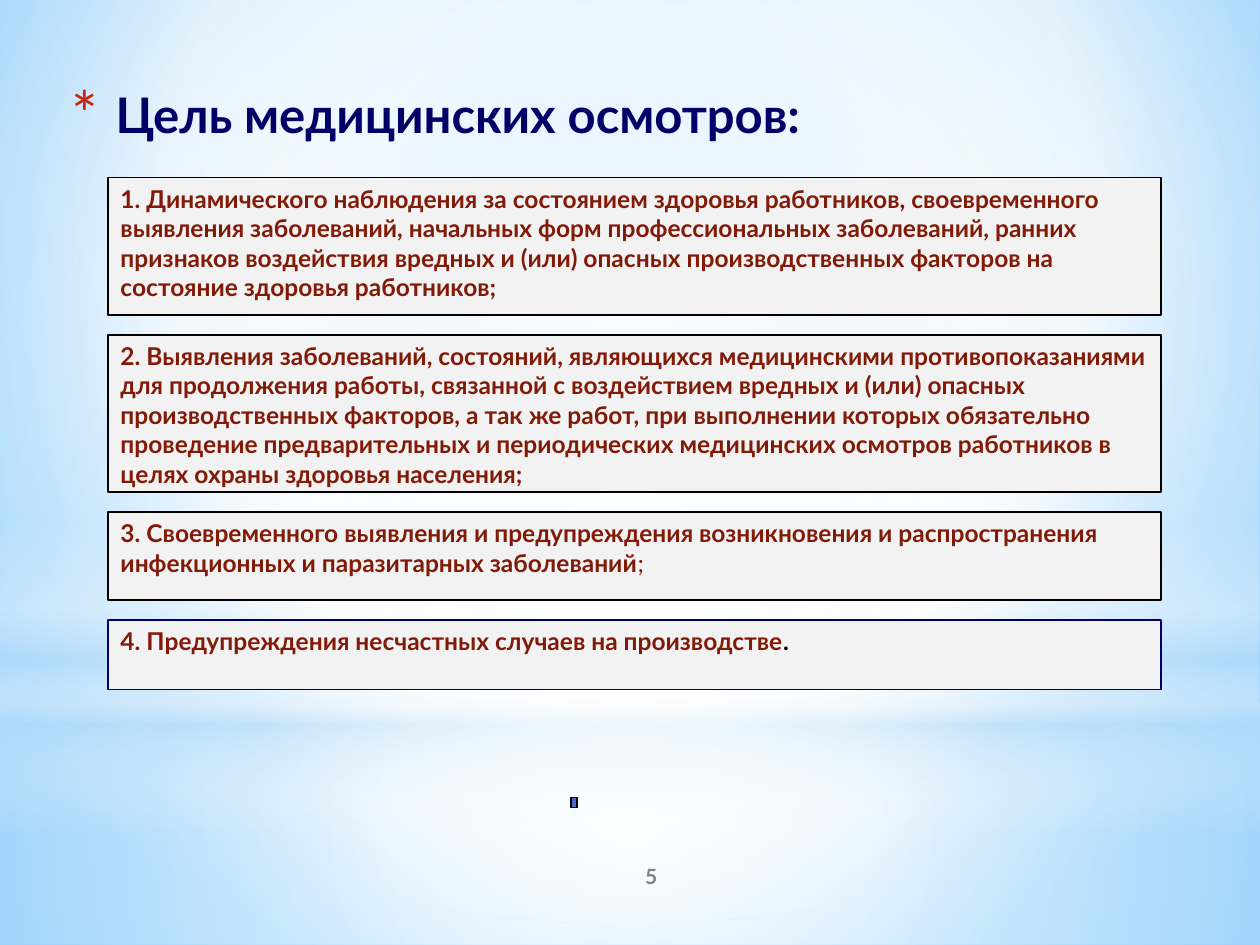
"""Build the slide on the goals of medical examinations."""
from dataclasses import dataclass

from lxml.etree import SubElement
from pptx import Presentation
from pptx.dml.color import RGBColor
from pptx.enum.shapes import MSO_SHAPE
from pptx.enum.text import MSO_ANCHOR, PP_ALIGN
from pptx.oxml.ns import qn
from pptx.util import Cm, Pt


@dataclass(frozen=True)
class Theme:
    font: str = "Lato"
    title_size: int = 28
    body_size: int = 14
    number_size: int = 12
    title: str = "000066"
    body: str = "821A08"
    black: str = "000000"
    number: str = "808080"
    bullet: str = "C3260C"
    box: str = "F2F2F2"
    marker: str = "4E67C8"
    white: str = "FFFFFF"
    haze: str = "B4DCFA"
    sky: str = "9ED5FF"
    deep_sky: str = "5BB9FF"


THEME = Theme()
CENTER = (50, 50, 50, 50)
GOALS = [
    (2.77, THEME.black, [("1. Динамического наблюдения за состоянием здоровья работников, своевременного выявления заболеваний, начальных форм профессиональных заболеваний, ранних признаков воздействия вредных и (или) опасных производственных факторов на состояние здоровья работников;", THEME.body, True)]),
    (3.17, THEME.black, [("2. Выявления заболеваний, состояний, являющихся медицинскими противопоказаниями для продолжения работы, связанной с воздействием вредных и (или) опасных производственных факторов, а так же работ, при выполнении которых обязательно проведение предварительных и периодических медицинских осмотров работников в целях охраны здоровья населения;", THEME.body, True)]),
    (1.78, THEME.black, [("3. Своевременного выявления и предупреждения возникновения и распространения инфекционных и паразитарных заболеваний", THEME.body, True), (";", THEME.body, False)]),
    (1.4, THEME.title, [("4. Предупреждения несчастных случаев на производстве", THEME.body, True), (".", THEME.black, True)]),
]


def set_gradient(fill, owner, stops, focus=None):
    """Give a fill radial stops around a focus, or vertical stops without one."""
    fill.solid()
    solid = owner.find(".//" + qn("a:solidFill"))
    gradient = solid.makeelement(qn("a:gradFill"), {"rotWithShape": "1"})
    solid.getparent().replace(solid, gradient)
    stop_list = SubElement(gradient, qn("a:gsLst"))
    for position, color, opacity in stops:
        stop = SubElement(stop_list, qn("a:gs"), pos=str(position * 1000))
        value = SubElement(stop, qn("a:srgbClr"), val=color)
        if opacity < 100:
            SubElement(value, qn("a:alpha"), val=str(opacity * 1000))
    if focus is None:
        SubElement(gradient, qn("a:lin"), ang="5400000", scaled="0")
        return
    radial = SubElement(gradient, qn("a:path"), path="circle")
    edges = {side: str(share * 1000) for side, share in zip("ltrb", focus)}
    SubElement(radial, qn("a:fillToRect"), edges)


def add_glow(slide, kind, top, height, stops, focus=None):
    """Add a full-width translucent gradient shape."""
    shape = slide.shapes.add_shape(kind, 0, Cm(top), Cm(25.4), Cm(height))
    shape.shadow.inherit = False
    set_gradient(shape.fill, shape._element, stops, focus)
    shape.line.fill.background()


def add_backdrop(slide):
    """Paint the sky background and its layers of light."""
    white, haze = THEME.white, THEME.haze
    set_gradient(slide.background.fill, slide._element,
                 [(0, THEME.sky, 100), (60, white, 100), (100, THEME.deep_sky, 100)],
                 (20, 10, 20, 60))
    rectangle = MSO_SHAPE.RECTANGLE
    add_glow(slide, rectangle, 14.17, 4.88,
             [(0, white, 91), (37, white, 76), (100, haze, 79)], CENTER)
    add_glow(slide, rectangle, 0, 14.17,
             [(0, white, 89), (48, white, 62), (100, haze, 79)], CENTER)
    add_glow(slide, rectangle, 10.46, 6.35,
             [(0, white, 0), (29, white, 30), (45, haze, 40),
              (55, white, 26), (65, haze, 60), (100, white, 0)])
    add_glow(slide, MSO_SHAPE.OVAL, 4.45, 14.17,
             [(0, white, 100), (56, white, 0)], CENTER)


def write_runs(shape, runs, size, alignment=PP_ALIGN.LEFT, anchor=MSO_ANCHOR.TOP):
    """Write one paragraph of (text, color, bold) runs and return it."""
    frame = shape.text_frame
    frame.word_wrap = True
    frame.vertical_anchor = anchor
    paragraph = frame.paragraphs[0]
    paragraph.alignment = alignment
    for text, color, bold in runs:
        run = paragraph.add_run()
        run.text = text
        run.font.name = THEME.font
        run.font.size = Pt(size)
        run.font.bold = bold
        run.font.color.rgb = RGBColor.from_string(color)
    return paragraph


def add_title(slide, text):
    """Add the title with its hanging asterisk bullet."""
    shape = slide.shapes.add_textbox(Cm(1.19), Cm(1.57), Cm(22.86), Cm(2.01))
    paragraph = write_runs(shape, [(text, THEME.title, True)], THEME.title_size)
    properties = paragraph._p.get_or_add_pPr()
    properties.set("marL", str(Cm(0.89)))
    properties.set("indent", str(-Cm(0.89)))
    color = SubElement(properties, qn("a:buClr"))
    SubElement(color, qn("a:srgbClr"), val=THEME.bullet)
    SubElement(properties, qn("a:buSzPct"), val="128000")
    SubElement(properties, qn("a:buFont"), typeface=THEME.font)
    SubElement(properties, qn("a:buChar"), char="*")


def add_box(slide, left, top, width, height, fill, line):
    """Add a flat rectangle with a thin outline."""
    shape = slide.shapes.add_shape(MSO_SHAPE.RECTANGLE, Cm(left), Cm(top), Cm(width), Cm(height))
    shape.shadow.inherit = False
    shape.fill.solid()
    shape.fill.fore_color.rgb = RGBColor.from_string(fill)
    shape.line.color.rgb = RGBColor.from_string(line)
    shape.line.width = Pt(1)
    return shape


def add_goals(slide):
    """Stack the goal boxes with equal gaps."""
    top, gap = 3.58, 0.4
    for height, line, runs in GOALS:
        box = add_box(slide, 2.18, top, 21.23, height, THEME.box, line)
        write_runs(box, runs, THEME.body_size)
        top += height + gap


def add_page_number(slide, text):
    """Add the centred page number."""
    shape = slide.shapes.add_textbox(Cm(10.59), Cm(17.15), Cm(5.08), Cm(1.02))
    write_runs(shape, [(text, THEME.number, True)], THEME.number_size,
               PP_ALIGN.CENTER, MSO_ANCHOR.MIDDLE)


def main():
    """Build and save the presentation."""
    presentation = Presentation()
    presentation.slide_width, presentation.slide_height = Cm(25.4), Cm(19.05)
    slide = presentation.slides.add_slide(presentation.slide_layouts[6])
    add_backdrop(slide)
    add_page_number(slide, "5")
    add_title(slide, "Цель медицинских осмотров:")
    add_goals(slide)
    add_box(slide, 11.51, 16.08, 0.13, 0.2, THEME.marker, THEME.black)
    presentation.save("out.pptx")


if __name__ == "__main__":
    main()
